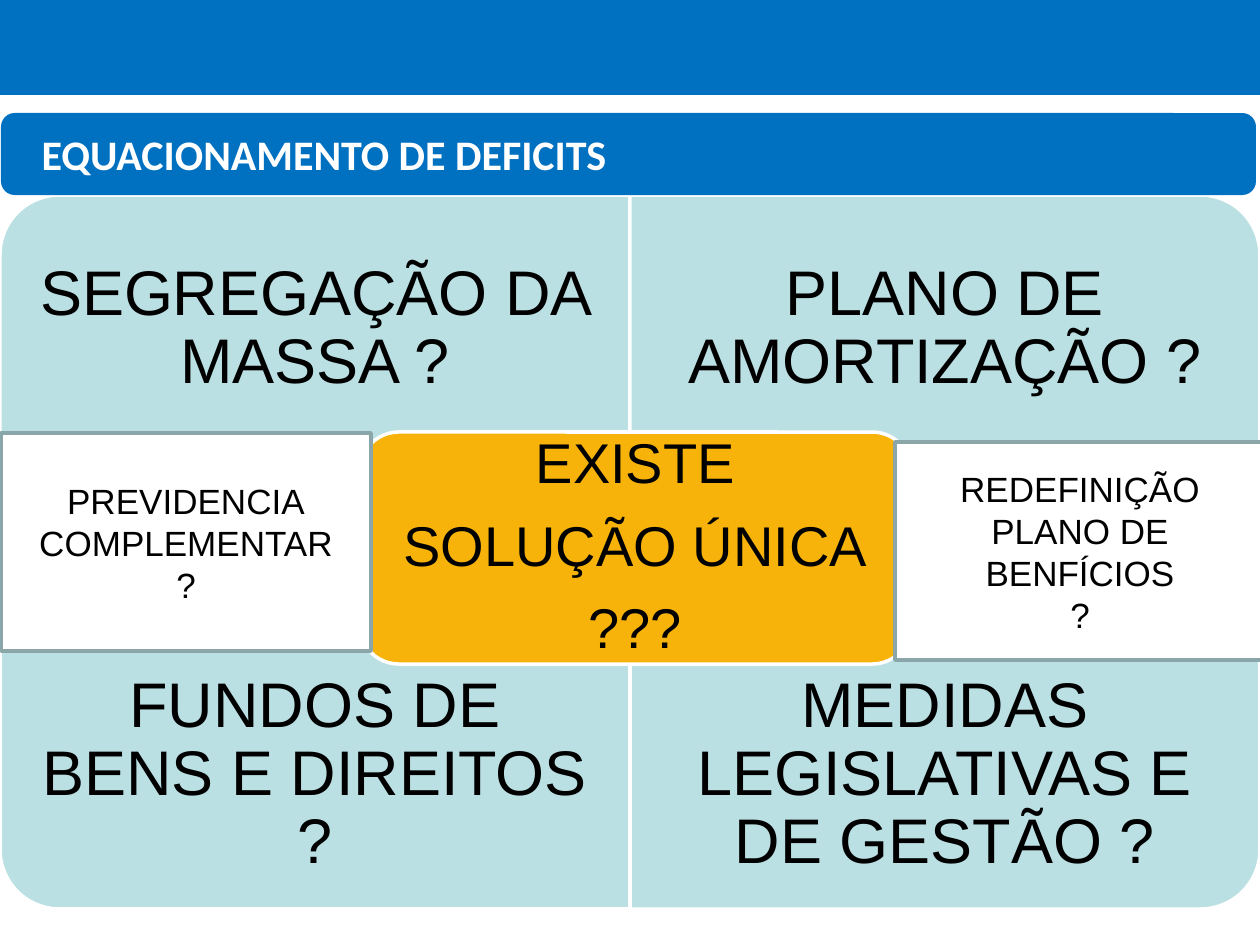
"""Build the slide on ways of settling pension deficits."""
from dataclasses import dataclass

from pptx import Presentation
from pptx.dml.color import RGBColor
from pptx.enum.shapes import MSO_SHAPE as Shape
from pptx.enum.text import MSO_ANCHOR as Anchor, MSO_AUTO_SIZE as AutoSize, PP_ALIGN as Align
from pptx.util import Emu, Pt

TITLE = "EQUACIONAMENTO DE DEFICITS"
QUADRANTS = [
    ("SEGREGAÇÃO DA MASSA ?", 270),
    ("PLANO DE AMORTIZAÇÃO ?", 0),
    ("FUNDOS DE BENS E DIREITOS ?", 180),
    ("MEDIDAS LEGISLATIVAS E DE GESTÃO ?", 90),
]
QUESTION = ["EXISTE", "SOLUÇÃO ÚNICA", "???"]
SIDE_NOTES = [
    (["PREVIDENCIA", "COMPLEMENTAR", "?"], (1, 433, 370, 218)),
    (["REDEFINIÇÃO PLANO DE BENFÍCIOS", "?"], (895, 442, 370, 218)),
]

PAGE = (1260, 945)
TOP_BAR = (0, 0, 1260, 95)
TITLE_BAR = (1, 113, 1255, 82)
TITLE_TEXT = (29, 122, 1201, 63)
CENTRE = (360, 432, 551, 232)
MATRIX_TOP, CELL_W, CELL_H, CELL_TEXT_H = 195, 630, 357, 268


@dataclass(frozen=True)
class Theme:
    blue: str = "0070C0"
    aqua: str = "BBE0E3"
    amber: str = "F7B309"
    grey: str = "8AA6A8"
    white: str = "FFFFFF"
    black: str = "000000"
    body_font: str = "Arial"
    title_font: str = "Calibri"
    title_size: int = 24
    cell_size: int = 36
    centre_size: int = 32
    note_size: int = 20
    line_width: int = 2
    line_spacing: float = 0.9
    space_after: float = 12.6


THEME = Theme()


def px(length):
    return Emu(round(length * 914400 / 126))


def add_box(page, kind, place, fill, line=None):
    box = page.shapes.add_shape(kind, *map(px, place))
    box.shadow.inherit = False
    box.fill.solid()
    box.fill.fore_color.rgb = RGBColor.from_string(fill)
    if line:
        box.line.color.rgb = RGBColor.from_string(line)
        box.line.width = Pt(THEME.line_width)
    else:
        box.line.fill.background()
    return box


def write(box, lines, size, inset=None, spaced=False, font=THEME.body_font,
          color=THEME.black, bold=False, align=Align.CENTER):
    frame = box.text_frame
    frame.word_wrap = True
    frame.auto_size = AutoSize.NONE
    frame.vertical_anchor = Anchor.MIDDLE
    if inset is not None:
        frame.margin_left = frame.margin_right = px(inset)
        frame.margin_top = frame.margin_bottom = px(inset)
    for index, line in enumerate(lines):
        para = frame.add_paragraph() if index else frame.paragraphs[0]
        para.alignment = align
        if spaced:
            para.line_spacing = THEME.line_spacing
            para.space_after = Pt(THEME.space_after)
        span = para.add_run()
        span.text = line
        span.font.name = font
        span.font.size = Pt(size)
        span.font.bold = bold
        span.font.color.rgb = RGBColor.from_string(color)


def add_quadrant(page, index, text, rotation):
    row, column = divmod(index, 2)
    left, top = column * CELL_W, MATRIX_TOP + row * CELL_H
    width, height = (CELL_H, CELL_W) if rotation % 180 else (CELL_W, CELL_H)
    place = (left + (CELL_W - width) / 2, top + (CELL_H - height) / 2, width, height)
    cell = add_box(page, Shape.ROUND_1_RECTANGLE, place, THEME.aqua, THEME.white)
    cell.rotation = rotation
    text_top = top + row * (CELL_H - CELL_TEXT_H)
    label = page.shapes.add_textbox(*map(px, (left, text_top, CELL_W, CELL_TEXT_H)))
    write(label, [text], THEME.cell_size, inset=36, spaced=True)


def add_title(page):
    add_box(page, Shape.ROUNDED_RECTANGLE, TITLE_BAR, THEME.blue)
    title = page.shapes.title
    title.left, title.top, title.width, title.height = map(px, TITLE_TEXT)
    write(title, [TITLE], THEME.title_size, font=THEME.title_font,
          color=THEME.white, bold=True, align=Align.LEFT)
    title.element.getparent().append(title.element)


def main():
    deck = Presentation()
    deck.slide_width, deck.slide_height = map(px, PAGE)
    page = deck.slides.add_slide(deck.slide_layouts[5])
    for index, (text, rotation) in enumerate(QUADRANTS):
        add_quadrant(page, index, text, rotation)
    centre = add_box(page, Shape.ROUNDED_RECTANGLE, CENTRE, THEME.amber, THEME.white)
    write(centre, QUESTION, THEME.centre_size, inset=16, spaced=True)
    add_title(page)
    for lines, place in SIDE_NOTES:
        note = add_box(page, Shape.RECTANGLE, place, THEME.white, THEME.grey)
        write(note, lines, THEME.note_size)
    add_box(page, Shape.RECTANGLE, TOP_BAR, THEME.blue)
    deck.save("out.pptx")


if __name__ == "__main__":
    main()
